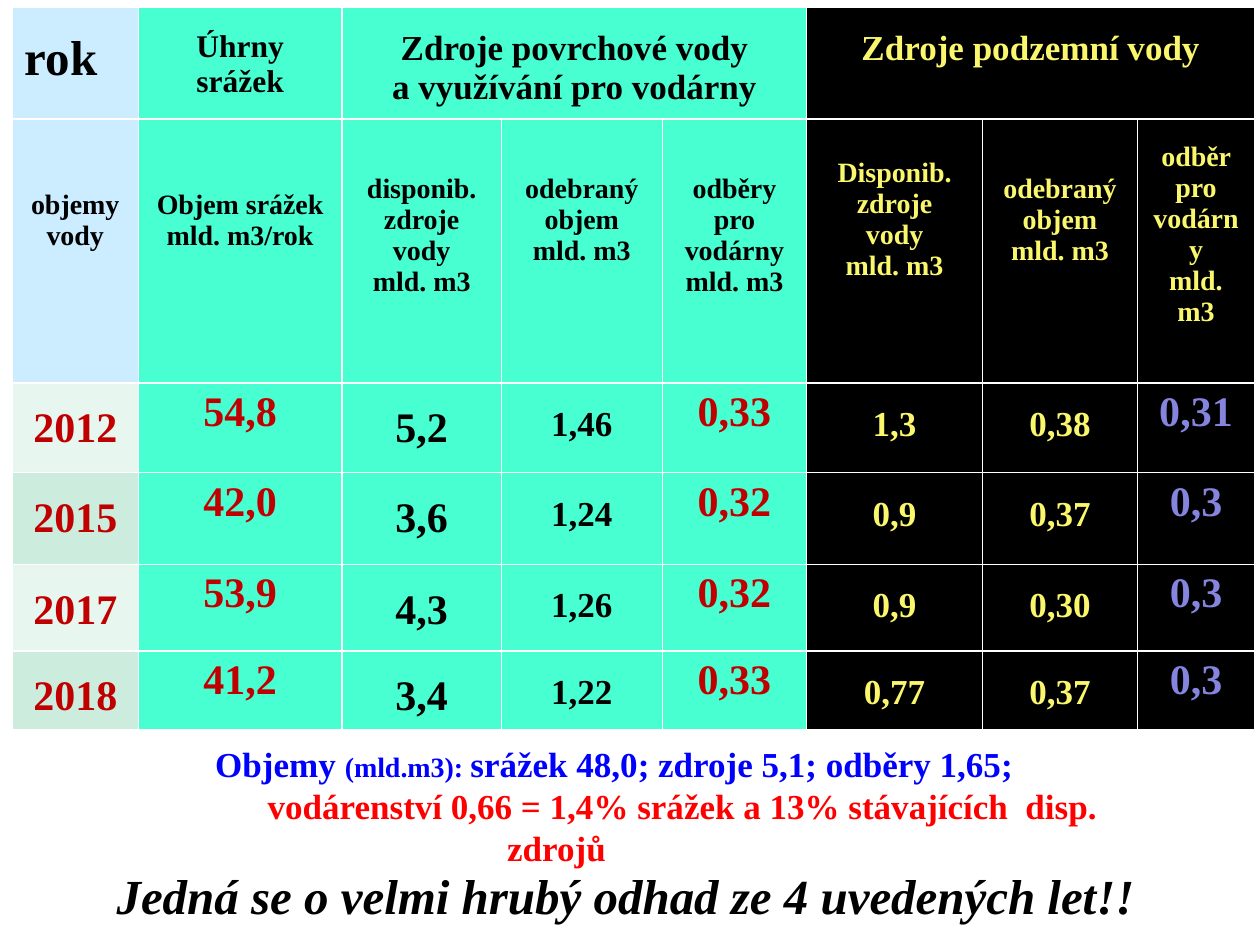
from pptx import Presentation
from pptx.dml.color import RGBColor
from pptx.enum import text
from pptx.util import Pt

FACE = "Times New Roman"
BLACK = RGBColor(0x00, 0x00, 0x00)
SKY = RGBColor(0xCC, 0xEC, 0xFF)
MINT = RGBColor(0x47, 0xFF, 0xD1)
PALE = RGBColor(0xE7, 0xF6, 0xEF)
SAGE = RGBColor(0xCC, 0xEC, 0xDE)
LEMON = RGBColor(0xFA, 0xF7, 0x6D)
WINE = RGBColor(0xC0, 0x00, 0x00)
LILAC = RGBColor(0x85, 0x85, 0xE0)
BLUE = RGBColor(0x00, 0x00, 0xFF)
RED = RGBColor(0xFF, 0x00, 0x00)

WIDTHS = [72, 116.5, 91, 92, 82.5, 100.5, 88.5, 67]
HEIGHTS = [64, 151, 51, 52.5, 49.5, 45]
FILLS = [SKY] + [MINT] * 4 + [BLACK] * 3
INKS = [BLACK] * 5 + [LEMON] * 3
HEADS = [
    (0, 0, 28, 10.4, ["rok"]),
    (1, 1, 18, 9.2, ["Úhrny", "srážek"]),
    (2, 4, 20, 9.2, ["Zdroje povrchové vody", "a využívání pro vodárny"]),
    (5, 7, 20, 9.2, ["Zdroje podzemní vody"]),
]
UNITS = [
    (36.8, ["objemy vody"]),
    (36.8, ["Objem srážek", "mld. m3/rok"]),
    (27.6, ["disponib.", "zdroje", "vody", "mld. m3"]),
    (27.6, ["odebraný objem", "mld. m3"]),
    (27.6, ["odběry pro vodárny", "mld. m3"]),
    (18.4, ["Disponib.", "zdroje", "vody", "mld. m3"]),
    (27.6, ["odebraný objem", "mld. m3"]),
    (9.2, ["odběr pro vodárny", "mld. m3"]),
]
DATA = [
    ["2012", "54,8", "5,2", "1,46", "0,33", "1,3", "0,38", "0,31"],
    ["2015", "42,0", "3,6", "1,24", "0,32", "0,9", "0,37", "0,3"],
    ["2017", "53,9", "4,3", "1,26", "0,32", "0,9", "0,30", "0,3"],
    ["2018", "41,2", "3,4", "1,22", "0,33", "0,77", "0,37", "0,3"],
]
SIZES = [24, 24, 24, 20, 24, 20, 20, 24]
GAPS = [9.2, 0, 9.2, 9.2, 0, 9.2, 9.2, 0]
TINTS = [WINE, WINE, BLACK, BLACK, WINE, LEMON, LEMON, LILAC]


def style(para, size, ink, align=text.PP_ALIGN.CENTER):
    para.alignment = align
    font = para.font
    font.name, font.size, font.bold = FACE, Pt(size), True
    font.color.rgb = ink


def fill_cell(cell, lines, size, ink, fill, gap):
    cell.fill.solid()
    cell.fill.fore_color.rgb = fill
    cell.margin_top = Pt(3.6 + gap)
    cell.text = "\n".join(lines)
    for para in cell.text_frame.paragraphs:
        style(para, size, ink)


def add_grid(slide, x, y, w, h):
    grid = slide.shapes.add_table(
        len(HEIGHTS), len(WIDTHS), Pt(x), Pt(y), Pt(w), Pt(h)).table
    for col, wide in zip(grid.columns, WIDTHS):
        col.width = Pt(wide)
    for row, high in zip(grid.rows, HEIGHTS):
        row.height = Pt(high)
    for first, last, size, gap, lines in HEADS:
        cell = grid.cell(0, first)
        if last > first:
            cell.merge(grid.cell(0, last))
        fill_cell(cell, lines, size, INKS[first], FILLS[first], gap)
    grid.cell(0, 0).text_frame.paragraphs[0].alignment = text.PP_ALIGN.LEFT
    for c, (gap, lines) in enumerate(UNITS):
        fill_cell(grid.cell(1, c), lines, 16, INKS[c], FILLS[c], gap)
    for r, row in enumerate(DATA):
        fills = [SAGE if r % 2 else PALE] + FILLS[1:]
        for c, value in enumerate(row):
            fill_cell(grid.cell(r + 2, c), [value], SIZES[c], TINTS[c],
                      fills[c], GAPS[c])


def add_box(slide, x, y, w, h):
    frame = slide.shapes.add_textbox(Pt(x), Pt(y), Pt(w), Pt(h)).text_frame
    frame.word_wrap = True
    return frame


def indent(para, size):
    para._p.get_or_add_pPr().set("indent", str(Pt(size)))


def add_sums(slide, x, y, w, h):
    frame = add_box(slide, x, y, w, h)
    para = frame.paragraphs[0]
    indent(para, 66)
    style(para, 20, BLUE)
    para.add_run().text = "Objemy "
    unit = para.add_run()
    unit.text = "(mld.m3): "
    unit.font.size = Pt(16)
    para.add_run().text = "srážek 48,0; zdroje 5,1; odběry 1,65;"
    para = frame.add_paragraph()
    para.text = "vodárenství 0,66 = 1,4% srážek a 13% stávajících  disp. zdrojů"
    indent(para, 144)
    style(para, 20, RED)


def add_note(slide, x, y, w, h):
    para = add_box(slide, x, y, w, h).paragraphs[0]
    para.text = "Jedná se o velmi hrubý odhad ze 4 uvedených let!!"
    style(para, 28, BLACK)
    para.font.italic = True


def main():
    deck = Presentation()
    deck.slide_width, deck.slide_height = Pt(720), Pt(540)
    slide = deck.slides.add_slide(deck.slide_layouts[6])
    add_grid(slide, 7, 4, sum(WIDTHS), sum(HEIGHTS))
    add_sums(slide, -25, 420.5, 686, 80)
    add_note(slide, 8.5, 491, 698, 41)
    deck.save("out.pptx")


if __name__ == "__main__":
    main()
